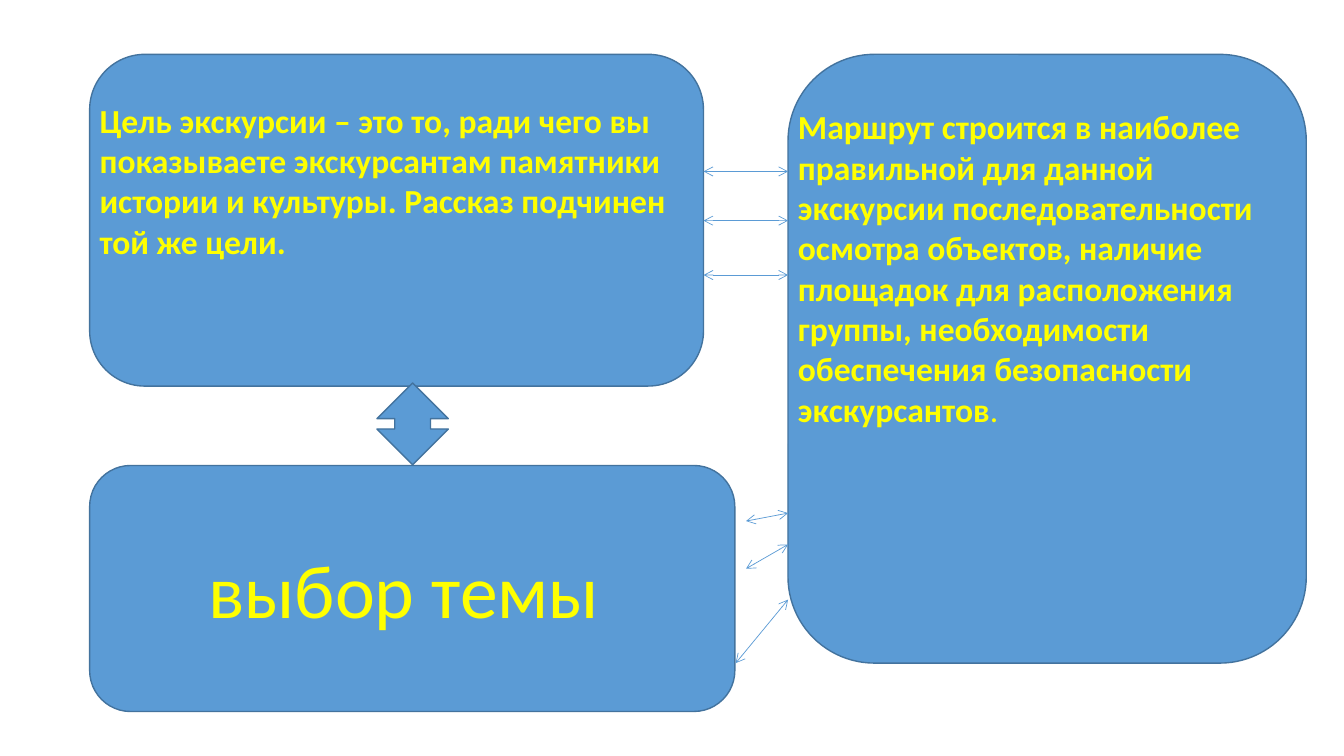
from lxml.etree import SubElement
from pptx import Presentation
from pptx.dml.color import RGBColor
from pptx.enum.shapes import MSO_CONNECTOR, MSO_SHAPE
from pptx.enum.text import MSO_ANCHOR, PP_ALIGN
from pptx.oxml.ns import qn
from pptx.util import Cm, Pt

HUES = {"fill": "5B9BD5", "edge": "43739E", "text": "FFFF00"}
LEFT, TOP = 2.26, 1.37
GOAL_W = 15.47
GOAL_END = LEFT + GOAL_W
ROUTE_X = 19.86

GOAL = ("Цель экскурсии – это то, ради чего вы показываете экскурсантам "
        "памятники истории и культуры. Рассказ подчинен той же цели.")
ROUTE = ("Маршрут строится в наиболее правильной для данной экскурсии "
         "последовательности осмотра объектов, наличие площадок для "
         "расположения группы, необходимости обеспечения безопасности "
         "экскурсантов")
THEME = "выбор темы "


def hue(name):
    return RGBColor.from_string(HUES[name])


def style(run, size, bold):
    run.font.name = "Calibri"
    run.font.size = Pt(size)
    run.font.bold = bold
    run.font.color.rgb = hue("text")


def add_block(slide, kind, *box):
    block = slide.shapes.add_shape(kind, *map(Cm, box))
    block.shadow.inherit = False
    block.fill.solid()
    block.fill.fore_color.rgb = hue("fill")
    block.line.color.rgb = hue("edge")
    block.line.width = Pt(1)
    return block


def add_title(block, text):
    frame = block.text_frame
    frame.text = text
    frame.word_wrap = True
    frame.vertical_anchor = MSO_ANCHOR.MIDDLE
    para = frame.paragraphs[0]
    para.alignment = PP_ALIGN.CENTER
    style(para.runs[0], 54, False)


def add_note(slide, text, inset, *box, end=""):
    """Add bold text set down by inset, with an optional plain ending."""
    frame = slide.shapes.add_textbox(*map(Cm, box)).text_frame
    frame.word_wrap = True
    frame.margin_top = Cm(inset)
    frame.text = text
    para = frame.paragraphs[0]
    style(para.runs[0], 24, True)
    if end:
        tail = para.add_run()
        tail.text = end
        style(tail, 24, False)


def add_link(slide, *ends):
    """Add a thin line with an open arrowhead at each end."""
    link = slide.shapes.add_connector(MSO_CONNECTOR.STRAIGHT, *map(Cm, ends))
    link.line.color.rgb = hue("fill")
    link.line.width = Pt(0.5)
    line = link.line._get_or_add_ln()
    for tag in ("a:headEnd", "a:tailEnd"):
        SubElement(line, qn(tag), type="arrow")
    SubElement(link._element.spPr, qn("a:effectLst"))


def main():
    deck = Presentation()
    deck.slide_width, deck.slide_height = Cm(33.87), Cm(19.05)
    slide = deck.slides.add_slide(deck.slide_layouts[6])
    box = MSO_SHAPE.ROUNDED_RECTANGLE

    add_block(slide, box, LEFT, TOP, GOAL_W, 8.36)
    add_note(slide, GOAL, 0.99, LEFT, 1.52, GOAL_W, 5.21)
    add_block(slide, box, ROUTE_X, TOP, 13.06, 15.34)
    add_note(slide, ROUTE, 1.16, ROUTE_X, 1.52, 12.8, 9.5, end=".")
    theme = add_block(slide, box, LEFT, 11.73, 16.26, 6.2)
    add_title(theme, THEME)
    add_block(slide, MSO_SHAPE.UP_DOWN_ARROW, 9.5, 9.65, 1.8, 2.06)

    for y in (4.32, 5.56, 6.93):
        add_link(slide, GOAL_END, y, ROUTE_X, y)
    for x, low, high in ((18.8, 13.13, 12.93), (18.8, 14.33, 13.72),
                         (18.54, 16.71, 15.11)):
        add_link(slide, x, low, ROUTE_X, high)

    deck.save("out.pptx")


if __name__ == "__main__":
    main()
